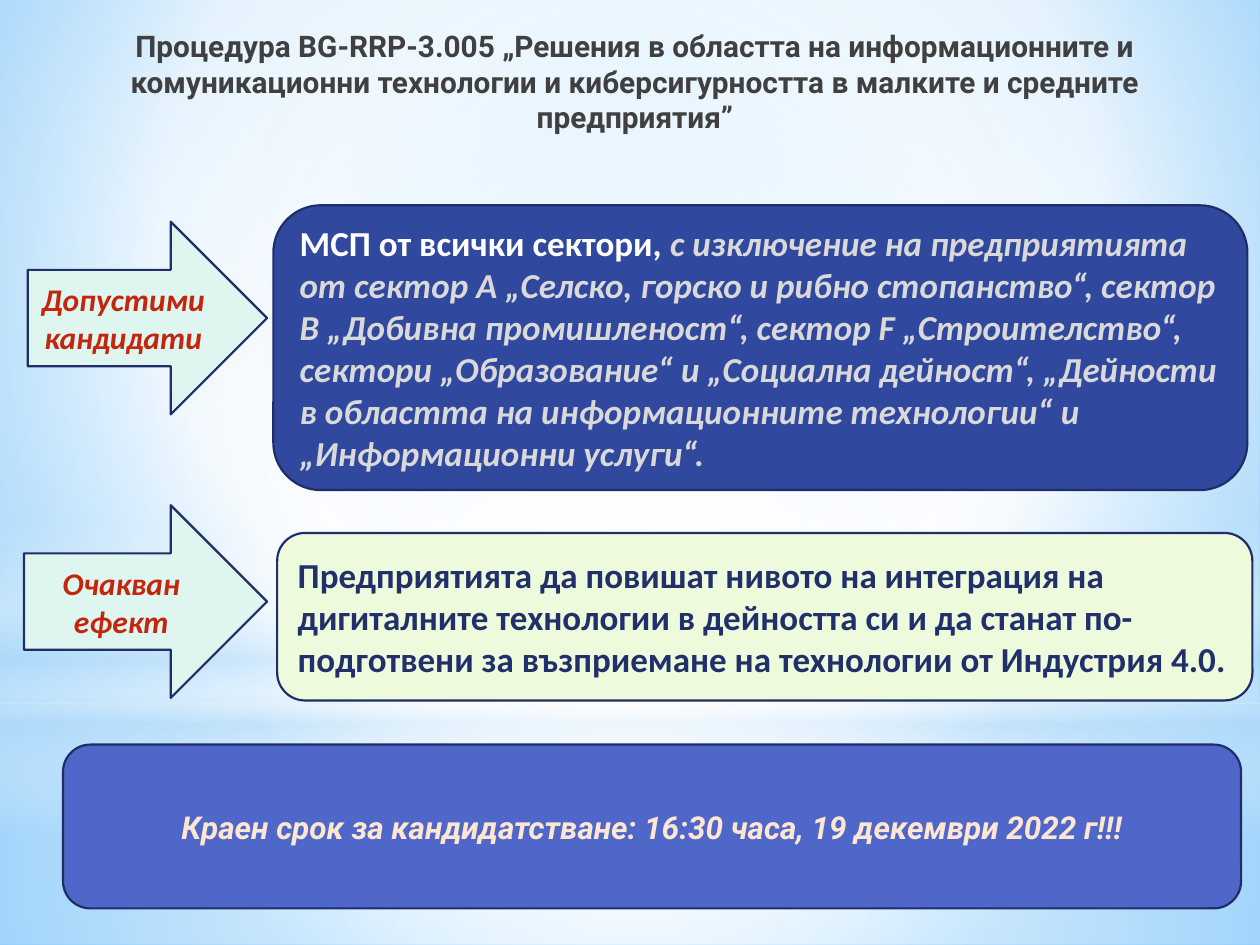
"""Build the slide on a support procedure for small and medium enterprises."""
import pptx
import pptx.dml.color
import pptx.enum.shapes
import pptx.enum.text
import pptx.oxml
import pptx.oxml.ns
import pptx.util

RGBColor = pptx.dml.color.RGBColor
Inches = pptx.util.Inches
Pt = pptx.util.Pt
MSO_SHAPE = pptx.enum.shapes.MSO_SHAPE
PP_ALIGN = pptx.enum.text.PP_ALIGN
MSO_ANCHOR = pptx.enum.text.MSO_ANCHOR
MSO_AUTO_SIZE = pptx.enum.text.MSO_AUTO_SIZE
qn = pptx.oxml.ns.qn

WHITE = RGBColor(0xFF, 0xFF, 0xFF)
SKY = RGBColor(0x9E, 0xD5, 0xFF)
AZURE = RGBColor(0x5B, 0xB9, 0xFF)
HAZE = RGBColor(0xB4, 0xDC, 0xFA)
OUTLINE = RGBColor(0x1F, 0x2E, 0x69)
ROYAL = RGBColor(0x31, 0x48, 0x9F)
MINT = RGBColor(0xDF, 0xF5, 0xEF)
LIME = RGBColor(0xED, 0xFB, 0xDC)
INDIGO = RGBColor(0x4E, 0x67, 0xC8)
RED = RGBColor(0xC3, 0x26, 0x0C)
SILVER = RGBColor(0xD9, 0xD9, 0xD9)
NAVY = RGBColor(0x21, 0x30, 0x6A)
PEACH = RGBColor(0xFF, 0xE6, 0xD3)
CHARCOAL = RGBColor(0x40, 0x40, 0x40)

CIRCLE = '<a:path path="circle"><a:fillToRect l="{}" t="{}" r="{}" b="{}"/></a:path>'
CENTRED = CIRCLE.format(50000, 50000, 50000, 50000)
UPPER = CIRCLE.format(20000, 10000, 20000, 60000)
DOWNWARD = '<a:lin ang="5400000" scaled="0"/>'

LAYERS = [
    (MSO_SHAPE.RECTANGLE, (0, 5.58, 10, 1.92), CENTRED,
     [(0, WHITE, 91), (37, WHITE, 76), (100, HAZE, 79)]),
    (MSO_SHAPE.RECTANGLE, (0, 0, 10, 5.58), CENTRED,
     [(0, WHITE, 89), (48, WHITE, 62), (100, HAZE, 79)]),
    (MSO_SHAPE.RECTANGLE, (0, 4.12, 10, 2.5), DOWNWARD,
     [(0, WHITE, 0), (29, WHITE, 30), (45, HAZE, 40),
      (55, WHITE, 26), (65, HAZE, 60), (100, WHITE, 0)]),
    (MSO_SHAPE.OVAL, (0, 1.75, 10, 5.58), CENTRED,
     [(0, WHITE, 100), (56, WHITE, 0)]),
]

BODY = {"name": "Calibri", "size": Pt(20), "bold": True, "italic": False}
LABEL = {"name": "Calibri", "size": Pt(18), "bold": True, "italic": True}
DEADLINE = {"name": "Roboto", "size": Pt(18), "bold": True, "italic": True}
HEADING = {"name": "Roboto", "size": Pt(17), "bold": True}

TITLE = ("Процедура BG-RRP-3.005 „Решения в областта на информационните и "
         "комуникационни технологии и киберсигурността в малките и средните "
         "предприятия”")
EXCLUSIONS = ("с изключение на предприятията от сектор А „Селско, горско и рибно "
              "стопанство“, сектор В „Добивна промишленост“, сектор F "
              "„Строителство“, сектори „Образование“ и „Социална дейност“, "
              "„Дейности в областта на информационните технологии“ и "
              "„Информационни услуги“.")
EFFECT = ("Предприятията да повишат нивото на интеграция на дигиталните "
          "технологии в дейността си и да станат по-подготвени за възприемане "
          "на технологии от Индустрия 4.0.")

PANELS = [
    (MSO_SHAPE.ROUNDED_RECTANGLE, (2.17, 1.63, 7.73, 2.26), ROYAL, PP_ALIGN.LEFT,
     [("МСП от всички сектори, ", BODY, WHITE),
      (EXCLUSIONS, {**BODY, "italic": True}, SILVER)]),
    (MSO_SHAPE.RIGHT_ARROW, (0.22, 1.76, 1.9, 1.53), MINT, PP_ALIGN.CENTER,
     [("Допустими кандидати", LABEL, RED)]),
    (MSO_SHAPE.RIGHT_ARROW, (0.19, 4.01, 1.93, 1.53), MINT, PP_ALIGN.CENTER,
     [("Очакван ефект", LABEL, RED)]),
    (MSO_SHAPE.ROUNDED_RECTANGLE, (2.2, 4.23, 7.74, 1.33), LIME, PP_ALIGN.LEFT,
     [(EFFECT, BODY, NAVY)]),
    (MSO_SHAPE.ROUNDED_RECTANGLE, (0.5, 5.91, 9.35, 1.3), INDIGO, PP_ALIGN.CENTER,
     [("Краен срок за кандидатстване: 16:30 часа, 19 декември 2022 г!!!",
       DEADLINE, PEACH)]),
]


def set_gradient(fill, properties, direction, stops):
    """Fill the owner of the given properties element with a gradient."""
    fill.solid()
    stop_xml = "".join(
        f'<a:gs pos="{position * 1000}"><a:srgbClr val="{color}">'
        f'<a:alpha val="{opacity * 1000}"/></a:srgbClr></a:gs>'
        for position, color, opacity in stops)
    gradient = pptx.oxml.parse_xml(
        f'<a:gradFill {pptx.oxml.ns.nsdecls("a")} rotWithShape="1">'
        f'<a:gsLst>{stop_xml}</a:gsLst>{direction}</a:gradFill>')
    properties.replace(properties.find(qn("a:solidFill")), gradient)


def add_backdrop(slide):
    """Paint the background and its translucent layers of light."""
    background = slide.background.fill
    background.solid()
    set_gradient(background, slide.element.find(".//" + qn("p:bgPr")), UPPER,
                 [(0, SKY, 100), (60, WHITE, 100), (100, AZURE, 100)])
    for outline, box, direction, stops in LAYERS:
        layer = slide.shapes.add_shape(outline, *map(Inches, box))
        layer.shadow.inherit = False
        set_gradient(layer.fill, layer.element.spPr, direction, stops)
        layer.line.fill.background()


def write_runs(frame, align, runs):
    """Write formatted runs into the first paragraph of a text frame."""
    frame.word_wrap = True
    paragraph = frame.paragraphs[0]
    paragraph.alignment = align
    for text, font_format, color in runs:
        run = paragraph.add_run()
        run.text = text
        for attribute, value in font_format.items():
            setattr(run.font, attribute, value)
        run.font.color.rgb = color


def add_panel(slide, outline, box, color, align, runs):
    """Add a filled, outlined shape with vertically centred text."""
    panel = slide.shapes.add_shape(outline, *map(Inches, box))
    panel.shadow.inherit = False
    panel.fill.solid()
    panel.fill.fore_color.rgb = color
    panel.line.color.rgb = OUTLINE
    panel.line.width = Pt(1.25)
    panel.text_frame.vertical_anchor = MSO_ANCHOR.MIDDLE
    write_runs(panel.text_frame, align, runs)


def place_title(slide):
    """Move the title in front of the backdrop and fill it in."""
    title = slide.shapes.title
    slide.shapes.element.append(title.element)
    placement = {"left": 0.5, "top": 0.17, "width": 9.08, "height": 0.96}
    for attribute, value in placement.items():
        setattr(title, attribute, Inches(value))
    title.text_frame.auto_size = MSO_AUTO_SIZE.NONE
    title.text_frame.vertical_anchor = MSO_ANCHOR.TOP
    write_runs(title.text_frame, PP_ALIGN.CENTER, [(TITLE, HEADING, CHARCOAL)])


def main():
    """Assemble and save the slide."""
    presentation = pptx.Presentation()
    presentation.slide_width = Inches(10)
    presentation.slide_height = Inches(7.5)
    slide = presentation.slides.add_slide(presentation.slide_layouts[5])
    add_backdrop(slide)
    for panel in PANELS:
        add_panel(slide, *panel)
    place_title(slide)
    presentation.save("out.pptx")


if __name__ == "__main__":
    main()
